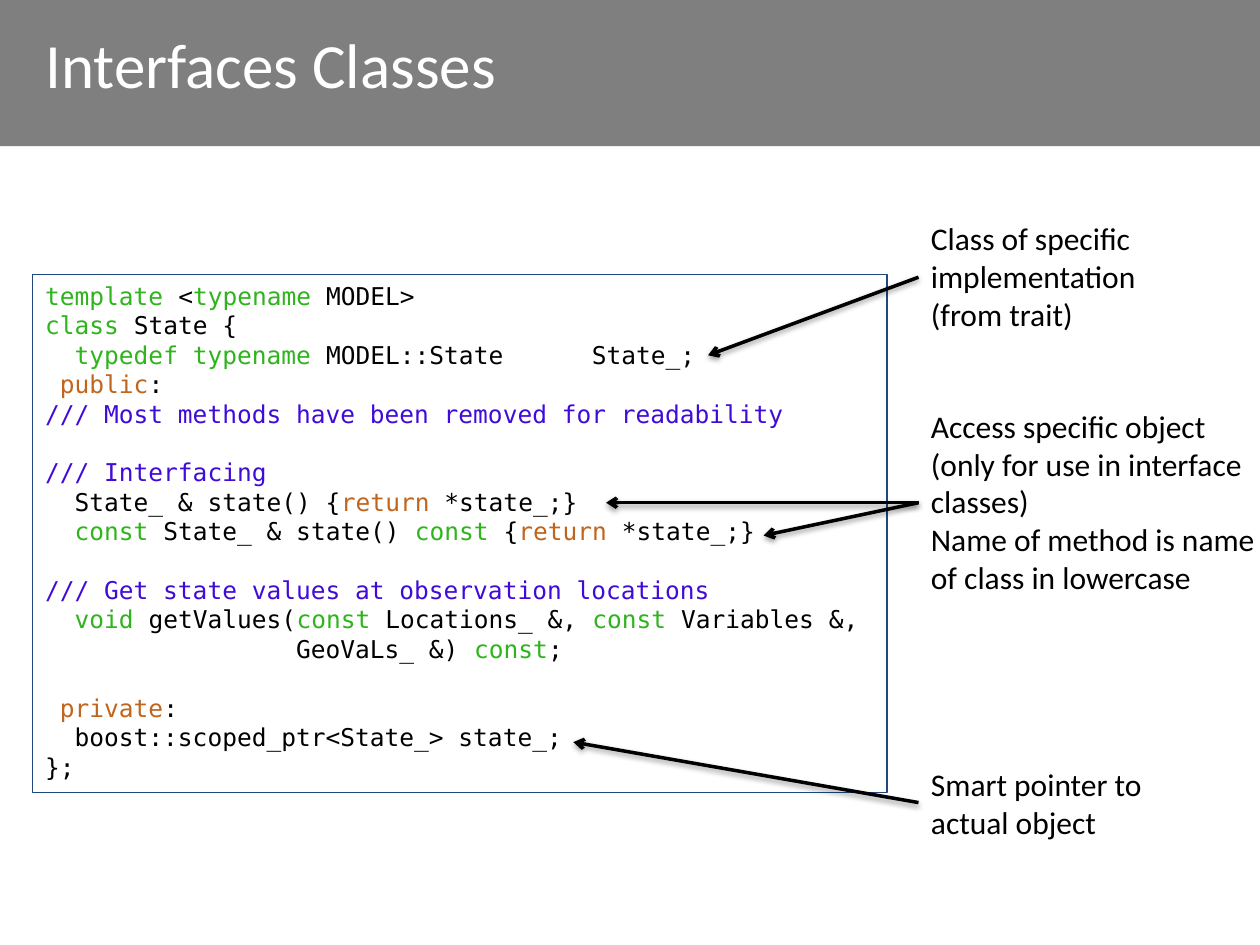
"""Build the Interfaces Classes slide: annotated C++ code with callouts."""
from lxml import etree
from pptx import Presentation
from pptx.dml.color import RGBColor as RGB
from pptx.enum.shapes import MSO_CONNECTOR as CONN, MSO_SHAPE as SHAPE
from pptx.enum.text import MSO_ANCHOR as ANCHOR, MSO_AUTO_SIZE as AUTO, PP_ALIGN as ALIGN
from pptx.oxml import parse_xml
from pptx.oxml.ns import nsdecls, qn
from pptx.util import Inches, Pt

COLORS = {"band": "7F7F7F", "white": "FFFFFF", "black": "000000", "border": "1F497D",
          "type": "2FB41D", "flow": "C1651C", "comment": "400BD9"}
KEYWORDS = {"template": "type", "typename": "type", "class": "type",
            "typedef typename": "type", "const": "type", "void": "type",
            "public": "flow", "private": "flow", "return": "flow"}
CODE = """template¦ <¦typename¦ MODEL>
class¦ State {
  ¦typedef typename¦ MODEL::State      State_;
 ¦public¦:
/// Most methods have been removed for readability

/// Interfacing
  State_ & state() {¦return¦ *state_;}
  ¦const¦ State_ & state() ¦const¦ {¦return¦ *state_;}

/// Get state values at observation locations
  ¦void¦ getValues(¦const¦ Locations_ &, ¦const¦ Variables &,
                 GeoVaLs_ &) ¦const¦;

 ¦private¦:
  boost::scoped_ptr<State_> state_;
};"""
NOTES = [
    (1.69, 1.86, 1.01, ["Class of specific", "implementation", "(from trait)"]),
    (3.18, 2.8, 1.62, ["Access specific object", "(only for use in interface", "classes)",
                       "Name of method is name", "of class in lowercase"]),
    (6.02, 1.9, 0.71, ["Smart pointer to", "actual object"]),
]
NOTE_LEFT = 7.29
ARROWS = [(2.2, 5.62, 2.82), (3.99, 4.81, 3.99), (3.99, 6.06, 4.25), (6.37, 4.55, 5.89)]
SHADOW = (f'<a:effectLst {nsdecls("a")}><a:outerShdw blurRad="40000" dist="20000" '
          'dir="5400000" rotWithShape="0"><a:srgbClr val="000000">'
          '<a:alpha val="38000"/></a:srgbClr></a:outerShdw></a:effectLst>')


def add_run(p, text, size=18, font="Calibri", color="black"):
    r = p.add_run()
    r.text = text
    r.font.size = Pt(size)
    r.font.name = font
    r.font.color.rgb = RGB.from_string(COLORS[color])


prs = Presentation()
prs.slide_width, prs.slide_height = Inches(10), Inches(7.5)
s = prs.slides.add_slide(prs.slide_layouts[5])

title = s.shapes.title
title.left, title.top, title.width, title.height = Inches(0.26), 0, Inches(8.31), Inches(1)
tf = title.text_frame
tf.vertical_anchor = ANCHOR.MIDDLE
p = tf.paragraphs[0]
p.alignment = ALIGN.LEFT
add_run(p, "Interfaces Classes", size=36, color="white")

band = s.shapes.add_shape(SHAPE.RECTANGLE, 0, 0, prs.slide_width, Inches(1.16))
band.shadow.inherit = False
band.fill.solid()
band.fill.fore_color.rgb = RGB.from_string(COLORS["band"])
band.line.fill.background()
title._element.addprevious(band._element)

sp = s.shapes.add_shape(SHAPE.RECTANGLE, Inches(0.26), Inches(2.18), Inches(6.78), Inches(4.11))
sp.shadow.inherit = False
sp.fill.background()
sp.line.color.rgb = RGB.from_string(COLORS["border"])
sp.line.width = Pt(0.75)
tf = sp.text_frame
tf.word_wrap = True
tf.auto_size = AUTO.SHAPE_TO_FIT_TEXT
tf.vertical_anchor = ANCHOR.TOP
for i, line in enumerate(CODE.split("\n")):
    p = tf.paragraphs[0] if i == 0 else tf.add_paragraph()
    p.alignment = ALIGN.LEFT
    p.font.size = Pt(14)
    p.font.name = "DejaVu Sans Mono"
    for part in filter(None, line.split("¦")):
        color = "comment" if part.startswith("///") else KEYWORDS.get(part, "black")
        add_run(p, part, size=14, font="DejaVu Sans Mono", color=color)

for top, width, height, lines in NOTES:
    sp = s.shapes.add_textbox(Inches(NOTE_LEFT), Inches(top), Inches(width), Inches(height))
    tf = sp.text_frame
    tf.word_wrap = False
    tf.auto_size = AUTO.SHAPE_TO_FIT_TEXT
    for i, line in enumerate(lines):
        p = tf.paragraphs[0] if i == 0 else tf.add_paragraph()
        add_run(p, line)

for y1, x2, y2 in ARROWS:
    arrow = s.shapes.add_connector(CONN.STRAIGHT, Inches(NOTE_LEFT), Inches(y1),
                                   Inches(x2), Inches(y2))
    arrow.line.color.rgb = RGB.from_string(COLORS["black"])
    arrow.line.width = Pt(2)
    etree.SubElement(arrow.line._get_or_add_ln(), qn("a:tailEnd"), type="arrow")
    arrow._element.spPr.append(parse_xml(SHADOW))

prs.save("out.pptx")
